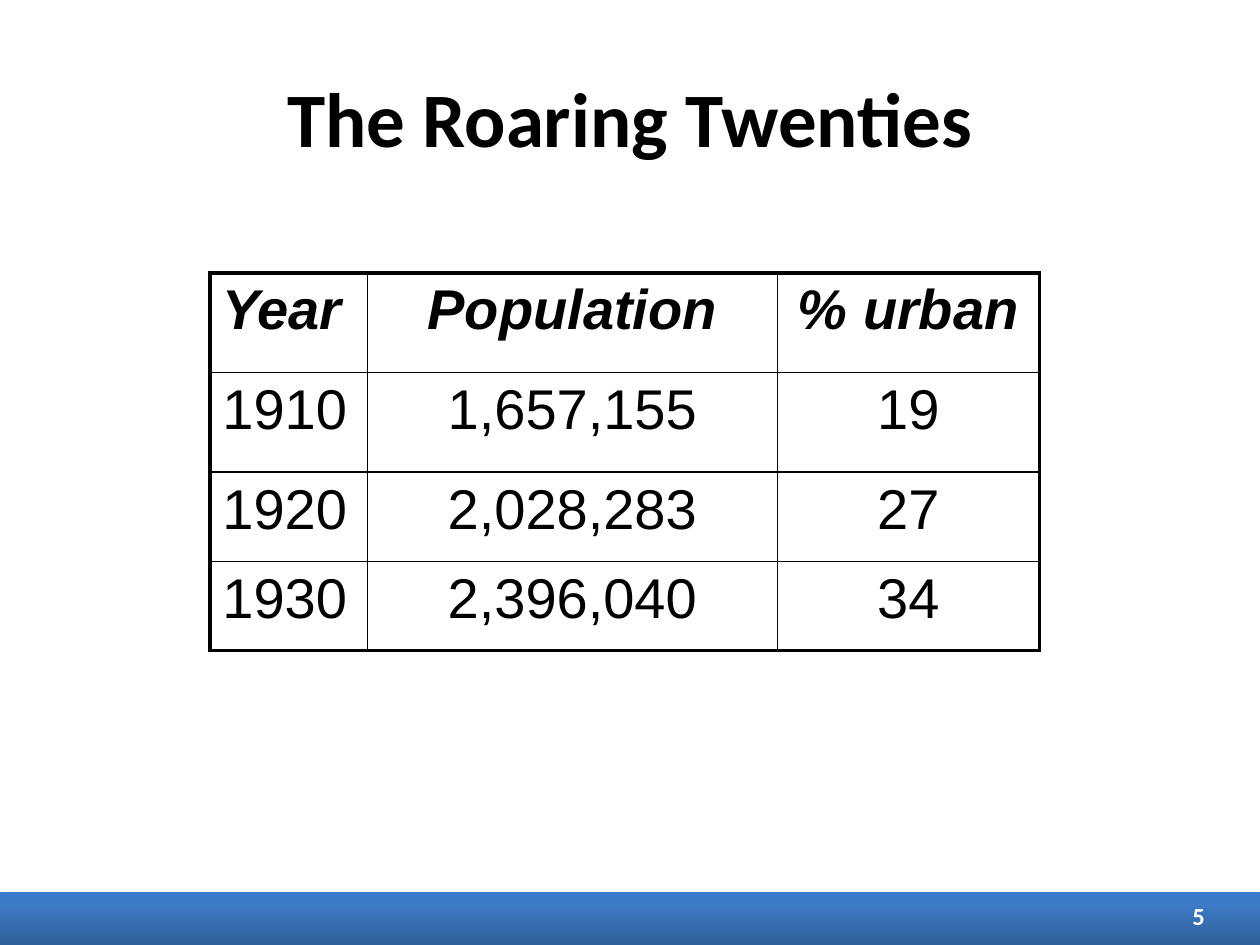
from lxml.etree import SubElement
from pptx import Presentation
from pptx.dml.color import RGBColor
from pptx.enum.shapes import MSO_SHAPE
from pptx.enum.text import MSO_ANCHOR, PP_ALIGN
from pptx.oxml.ns import qn
from pptx.util import Cm, Pt

COLORS = {
    "ink": "000000",
    "paper": "FFFFFF",
    "deep": "2F5F99",
    "mid": "3D7CC7",
    "light": "3A7CCB",
}
ROWS = [
    ("Year", "Population", "% urban"),
    ("1910", "1,657,155", "19"),
    ("1920", "2,028,283", "27"),
    ("1930", "2,396,040", "34"),
]
WIDTHS = (3.18, 8.26, 5.28)
HEIGHTS = (2.01, 2.01, 1.8, 1.8)
THICK, THIN = 2.25, 1


def style(para, size, face, color="ink", bold=False, italic=False):
    for run in para.runs:
        font = run.font
        font.size, font.name = Pt(size), face
        font.bold, font.italic = bold, italic
        font.color.rgb = RGBColor.from_string(COLORS[color])


def add_color(node, color):
    return SubElement(node, qn("a:srgbClr"), val=COLORS[color])


def add_label(slide, text, box, size, align, anchor, color):
    label = slide.shapes.add_textbox(*map(Cm, box))
    frame = label.text_frame
    frame.word_wrap = True
    frame.vertical_anchor = anchor
    frame.text = text
    para = frame.paragraphs[0]
    para.alignment = align
    style(para, size, "Calibri", color, bold=True)


def add_band(slide):
    band = slide.shapes.add_shape(
        MSO_SHAPE.RECTANGLE, Cm(0), Cm(17.98), Cm(25.4), Cm(1.07))
    band.line.fill.background()
    band.fill.gradient()
    band.fill.gradient_angle = 90
    band.shadow.inherit = False
    props = band._element.spPr
    stops = props.find(".//" + qn("a:gsLst"))
    stops.clear()
    for place, color in ((0, "deep"), (80, "mid"), (100, "light")):
        add_color(SubElement(stops, qn("a:gs"), pos=str(place * 1000)), color)
    shade = SubElement(
        props.find(qn("a:effectLst")), qn("a:outerShdw"),
        blurRad=str(Pt(3.1)), dist=str(Pt(1.8)), dir="5400000", rotWithShape="0")
    SubElement(add_color(shade, "ink"), qn("a:alpha"), val="35000")


def set_edges(cell, edges):
    props = cell._tc.get_or_add_tcPr()
    for spot, (side, outer) in enumerate(edges):
        line = SubElement(
            props, qn("a:ln" + side), w=str(Pt(THICK if outer else THIN)))
        add_color(SubElement(line, qn("a:solidFill")), "ink")
        props.remove(line)
        props.insert(spot, line)


def add_grid(slide):
    frame = slide.shapes.add_table(
        len(ROWS), len(WIDTHS), Cm(4.23), Cm(5.5), Cm(sum(WIDTHS)), Cm(sum(HEIGHTS)))
    table = frame.table
    table.first_row = table.horz_banding = False
    for col, width in zip(table.columns, WIDTHS):
        col.width = Cm(width)
    for row, height in zip(table.rows, HEIGHTS):
        row.height = Cm(height)
    for i, row in enumerate(ROWS):
        for j, text in enumerate(row):
            cell = table.cell(i, j)
            cell.fill.background()
            cell.text_frame.text = text
            para = cell.text_frame.paragraphs[0]
            para.alignment = PP_ALIGN.CENTER if j else PP_ALIGN.LEFT
            style(para, 32, "Arial", bold=i == 0, italic=i == 0)
            set_edges(cell, (
                ("L", j == 0), ("R", j == len(WIDTHS) - 1),
                ("T", i == 0), ("B", i == len(ROWS) - 1)))


def main():
    deck = Presentation()
    deck.slide_width, deck.slide_height = Cm(25.4), Cm(19.05)
    slide = deck.slides.add_slide(deck.slide_layouts[6])
    fill = slide.background.fill
    fill.solid()
    fill.fore_color.rgb = RGBColor.from_string(COLORS["paper"])
    add_band(slide)
    add_label(slide, "The Roaring Twenties", (1.27, 0.76, 22.86, 3.18), 44,
              PP_ALIGN.CENTER, MSO_ANCHOR.MIDDLE, "ink")
    add_label(slide, "5", (18.62, 18.03, 5.92, 1.02), 14,
              PP_ALIGN.RIGHT, MSO_ANCHOR.TOP, "paper")
    add_grid(slide)
    deck.save("out.pptx")


if __name__ == "__main__":
    main()
